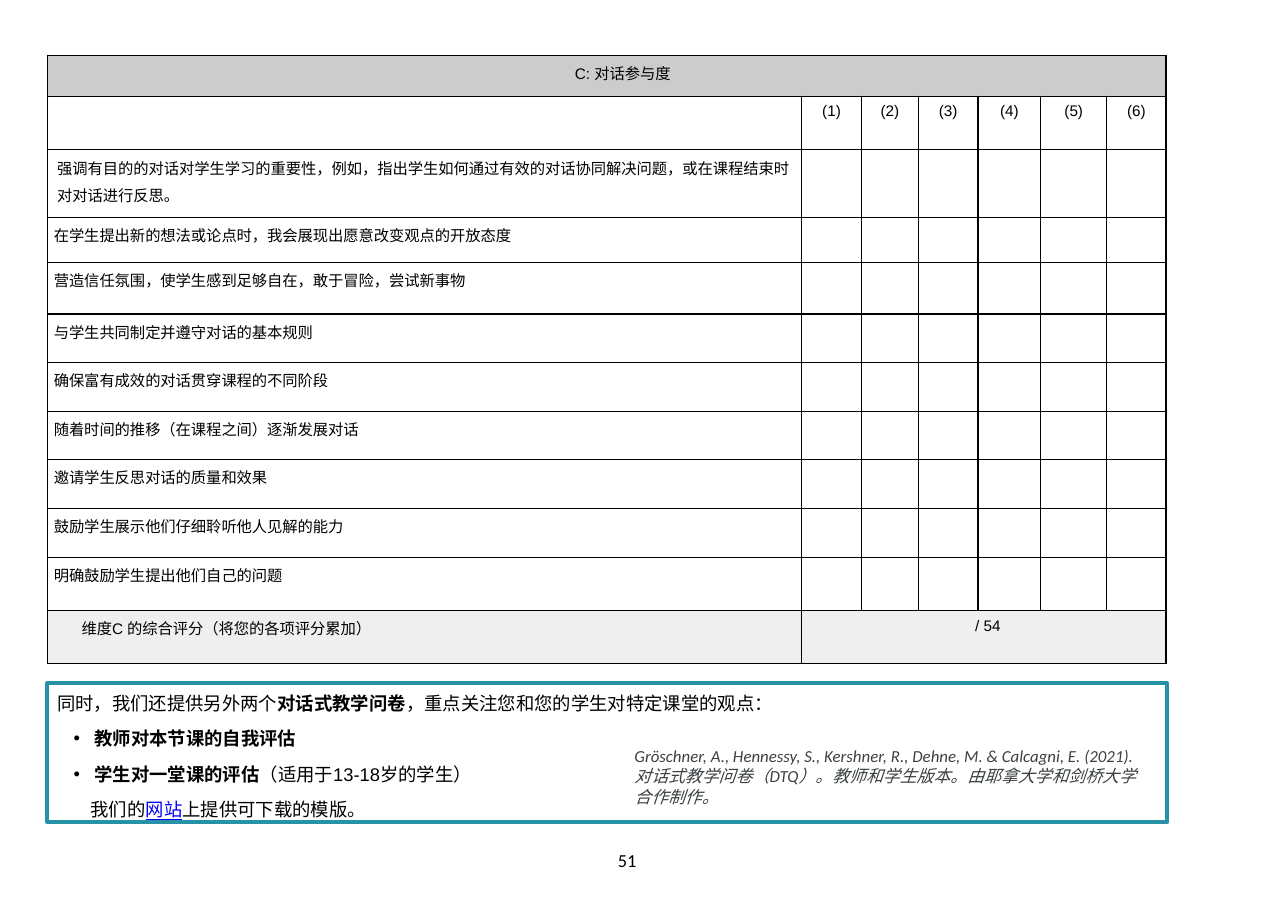
from lxml.etree import SubElement
from pptx import Presentation
from pptx.dml.color import RGBColor
from pptx.enum.text import MSO_ANCHOR, MSO_AUTO_SIZE, PP_ALIGN
from pptx.oxml.ns import qn
from pptx.util import Cm, Pt

BLACK = RGBColor(0x00, 0x00, 0x00)
WHITE = RGBColor(0xFF, 0xFF, 0xFF)
HEADER_GREY = RGBColor(0xCC, 0xCC, 0xCC)
TOTAL_GREY = RGBColor(0xEF, 0xEF, 0xEF)
TEAL = RGBColor(0x27, 0x91, 0xA6)
LINK_BLUE = RGBColor(0x00, 0x00, 0xFF)
CITATION_GREY = RGBColor(0x3B, 0x40, 0x43)

COLUMN_WIDTHS = [17.4, 1.37, 1.32, 1.37, 1.45, 1.52, 1.37]
ROW_HEIGHTS = [0.94, 1.22, 1.57, 1.04, 1.19, 1.12, 1.12, 1.12, 1.12, 1.14, 1.22, 1.22]
STATEMENTS = [
    "强调有目的的对话对学生学习的重要性，例如，指出学生如何通过有效的对话协同解决问题，或在课程结束时对对话进行反思。",
    "在学生提出新的想法或论点时，我会展现出愿意改变观点的开放态度",
    "营造信任氛围，使学生感到足够自在，敢于冒险，尝试新事物",
    "与学生共同制定并遵守对话的基本规则",
    "确保富有成效的对话贯穿课程的不同阶段",
    "随着时间的推移（在课程之间）逐渐发展对话",
    "邀请学生反思对话的质量和效果",
    "鼓励学生展示他们仔细聆听他人见解的能力",
    "明确鼓励学生提出他们自己的问题",
]
CITATION = (
    "Gröschner, A., Hennessy, S., Kershner, R., Dehne, M. & Calcagni, E. (2021). "
    "对话式教学问卷（DTQ）。教师和学生版本。由耶拿大学和剑桥大学合作制作。"
)


def set_font(font, size, name, color=BLACK, bold=False, italic=False):
    font.size, font.name, font.bold, font.italic = Pt(size), name, bold, italic
    font.color.rgb = color


def set_indent(para, left, first=0):
    properties = para._p.get_or_add_pPr()
    properties.set("marL", str(Cm(left)))
    properties.set("indent", str(Cm(first)))


def set_bullet(para, char=None):
    """Give the paragraph a black bullet, or none at all."""
    properties = para._p.get_or_add_pPr()
    if char is None:
        SubElement(properties, qn("a:buNone"))
        return
    color = SubElement(properties, qn("a:buClr"))
    SubElement(color, qn("a:srgbClr"), val=str(BLACK))
    SubElement(properties, qn("a:buFont"), typeface="Arial")
    SubElement(properties, qn("a:buChar"), char=char)


def set_margins(target, left=0, top=0, right=0, bottom=0):
    target.margin_left, target.margin_top = Cm(left), Cm(top)
    target.margin_right, target.margin_bottom = Cm(right), Cm(bottom)


class QuestionnairePage:
    def __init__(self, deck):
        self.slide = deck.slides.add_slide(deck.slide_layouts[1])
        title, self.body = self.slide.placeholders
        title.element.getparent().remove(title.element)

    def add_rating_table(self, left, top):
        """Add an empty bordered grid and return its table."""
        frame = self.slide.shapes.add_table(
            len(ROW_HEIGHTS), len(COLUMN_WIDTHS), Cm(left), Cm(top),
            Cm(sum(COLUMN_WIDTHS)), Cm(sum(ROW_HEIGHTS)))
        table = frame.table
        table.first_row = table.horz_banding = False
        for column, width in zip(table.columns, COLUMN_WIDTHS):
            column.width = Cm(width)
        for row, height in zip(table.rows, ROW_HEIGHTS):
            row.height = Cm(height)
        for cell in table.iter_cells():
            properties = cell._tc.get_or_add_tcPr()
            for side in ("lnL", "lnR", "lnT", "lnB"):
                line = SubElement(properties, qn(f"a:{side}"), w=str(Pt(0.96)))
                fill = SubElement(line, qn("a:solidFill"))
                SubElement(fill, qn("a:srgbClr"), val=str(BLACK))
            self.fill_cell(cell, WHITE)
            set_margins(cell, top=0.15)
            set_font(cell.text_frame.paragraphs[0].font, 10, "Arial")
        return table

    def fill_cell(self, cell, color):
        cell.fill.solid()
        cell.fill.fore_color.rgb = color

    def write_cell(self, cell, text, indent=0, align=PP_ALIGN.LEFT):
        para = cell.text_frame.paragraphs[0]
        para.text, para.alignment = text, align
        set_indent(para, indent)
        return para

    def place_body(self, left, top, width, height):
        """Turn the body placeholder into the bordered note box."""
        box = self.body
        box.left, box.top, box.width, box.height = Cm(left), Cm(top), Cm(width), Cm(height)
        box.line.color.rgb = TEAL
        box.line.width = Pt(2.5)
        frame = box.text_frame
        frame.auto_size = MSO_AUTO_SIZE.NONE
        frame.vertical_anchor = MSO_ANCHOR.TOP
        set_margins(frame, top=0.2)
        return frame

    def write_note(self, para, spans, left, first=0, before=8.8, bullet=None):
        """Write spans of (text, font name, bold, color) into one paragraph."""
        set_indent(para, left, first)
        set_bullet(para, bullet)
        para.space_before = Pt(before)
        for text, name, bold, color in spans:
            span = para.add_run()
            span.text = text
            set_font(span.font, 12, name, color, bold)
            span.font.underline = color == LINK_BLUE

    def add_text(self, text, left, top, width, height, size, color=BLACK, italic=False):
        box = self.slide.shapes.add_textbox(Cm(left), Cm(top), Cm(width), Cm(height))
        box.text_frame.word_wrap = True
        para = box.text_frame.paragraphs[0]
        para.text = text
        set_font(para.font, size, "Calibri", color, italic=italic)


def main():
    deck = Presentation()
    deck.slide_width, deck.slide_height = Cm(29.7), Cm(21)
    page = QuestionnairePage(deck)

    table = page.add_rating_table(1.09, 1.28)
    last_row, last_column = len(ROW_HEIGHTS) - 1, len(COLUMN_WIDTHS) - 1
    header, total, score = table.cell(0, 0), table.cell(last_row, 0), table.cell(last_row, 1)
    header.merge(table.cell(0, last_column))
    score.merge(table.cell(last_row, last_column))
    page.fill_cell(header, HEADER_GREY)
    page.fill_cell(total, TOTAL_GREY)
    page.fill_cell(score, TOTAL_GREY)

    page.write_cell(header, " C: 对话参与度", 0.64, PP_ALIGN.CENTER)
    for rating in range(1, last_column + 1):
        page.write_cell(table.cell(1, rating), f"({rating})", align=PP_ALIGN.CENTER)
    for row, statement in enumerate(STATEMENTS, start=2):
        page.write_cell(table.cell(row, 0), statement, 0.15)
    long_cell = table.cell(2, 0)
    long_cell.margin_top = Cm(0.08)
    long_para = long_cell.text_frame.paragraphs[0]
    long_para.line_spacing = 1.2
    set_indent(long_para, 0.23)
    page.write_cell(total, "维度C 的综合评分（将您的各项评分累加）", 0.79)
    page.write_cell(score, "/ 54", 0.18, PP_ALIGN.CENTER)

    frame = page.place_body(1.09, 15.75, 25.83, 3.2)
    page.write_note(frame.paragraphs[0], [
        ("同时，我们还提供另外两个", "Calibri", False, BLACK),
        ("对话式教学问卷", "Arial", True, BLACK),
        ("，重点关注您和您的学生对特定课堂的观点：", "Calibri", False, BLACK),
    ], 0.23, before=0)
    bullets = [
        [("教师对本节课的自我评估", "Arial", True, BLACK)],
        [("学生对一堂课的评估", "Arial", True, BLACK),
         ("（适用于13-18岁的学生）", "Arial", False, BLACK)],
    ]
    for spans in bullets:
        page.write_note(frame.add_paragraph(), spans, 1.09, -0.48, bullet="•")
    page.write_note(frame.add_paragraph(), [
        ("我们的", "Arial", False, BLACK),
        ("网站", "Arial", False, LINK_BLUE),
        ("上提供可下载的模版。", "Arial", False, BLACK),
    ], 1)

    page.add_text("51", 14, 19.46, 1.27, 0.76, 12)
    page.add_text(CITATION, 14.38, 17.07, 12.27, 1.65, 11, CITATION_GREY, italic=True)
    deck.save("out.pptx")


if __name__ == "__main__":
    main()
